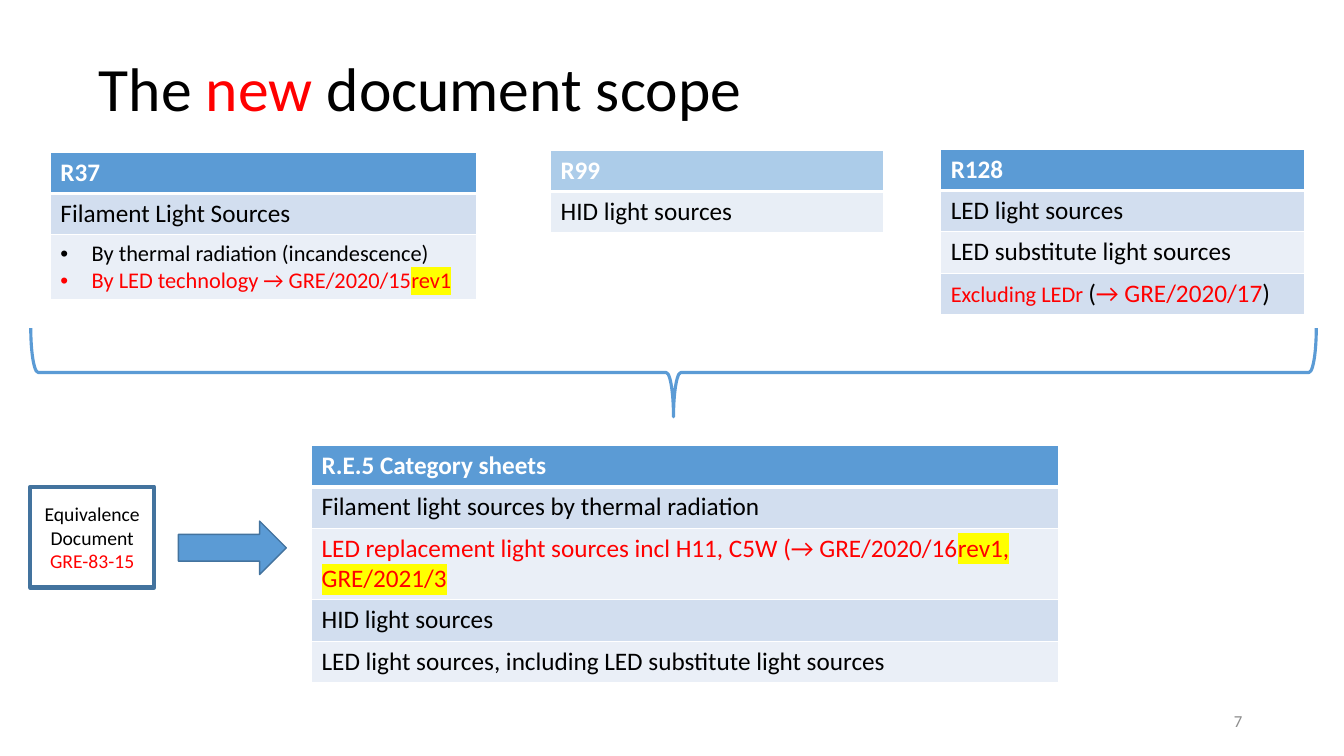
"""Build the slide on the new document scope for light source regulations."""
from dataclasses import dataclass
from typing import Optional

from lxml import etree
from pptx import Presentation
from pptx.dml.color import RGBColor
from pptx.enum.shapes import MSO_SHAPE
from pptx.enum.text import MSO_ANCHOR, MSO_AUTO_SIZE, PP_ALIGN
from pptx.oxml.ns import qn
from pptx.util import Emu, Pt

PX = 9144
FONT = "Calibri"
BLACK, WHITE, RED, YELLOW = "000000", "FFFFFF", "FF0000", "FFFF00"
BLUE, DARK_BLUE, GREY = "5B9BD5", "43739E", "8C8C8C"
BANDS = ("D2DEEF", "EAEFF7")
LEFT, CENTER, RIGHT = PP_ALIGN.LEFT, PP_ALIGN.CENTER, PP_ALIGN.RIGHT
MIDDLE = MSO_ANCHOR.MIDDLE
NO_AUTOFIT = MSO_AUTO_SIZE.NONE
RECTANGLE, RIGHT_ARROW, LEFT_BRACE = (
    MSO_SHAPE.RECTANGLE, MSO_SHAPE.RIGHT_ARROW, MSO_SHAPE.LEFT_BRACE)
ROW, TWO_SMALL_LINES, TWO_LINES = 41, 62, 70
BULLET_INDENT = 31


@dataclass(frozen=True)
class Span:
    """A stretch of text with one format."""
    text: str
    color: str = BLACK
    size: int = 18
    bold: bool = False
    highlight: Optional[str] = None


Paragraphs = list[list[Span]]


@dataclass(frozen=True)
class Row:
    """A body row of a regulation table."""
    paragraphs: Paragraphs
    height: int = ROW
    bulleted: bool = False


@dataclass(frozen=True)
class Regulation:
    """A one-column table with a heading."""
    heading: str
    left: int
    top: int
    width: int
    rows: list[Row]
    opacity: int = 100


@dataclass(frozen=True)
class Figure:
    """A preset shape with its outline and fill."""
    preset: int
    box: tuple[int, int, int, int]
    line: str
    line_width: float
    fill: Optional[str] = None
    rotation: int = 0


REGULATIONS = [
    Regulation("R37", 50, 151, 423, [
        Row([[Span("Filament Light Sources")]]),
        Row([[Span("By thermal radiation (incandescence)", size=16)],
             [Span("By LED technology → GRE/2020/15", RED, 16),
              Span("rev1", RED, 16, highlight=YELLOW)]], TWO_SMALL_LINES, True),
    ]),
    Regulation("R128", 933, 148, 361, [
        Row([[Span("LED light sources")]]),
        Row([[Span("LED substitute light sources")]]),
        Row([[Span("Excluding LEDr ", RED, 16), Span("("),
              Span("→ GRE/2020/17", RED), Span(")")]]),
    ]),
    Regulation("R.E.5 Category sheets", 309, 442, 741, [
        Row([[Span("Filament light sources by thermal radiation")]]),
        Row([[Span("LED replacement light sources incl H11, C5W (→ GRE/2020/16", RED),
              Span("rev1, GRE/2021/3", RED, highlight=YELLOW)]], TWO_LINES),
        Row([[Span("HID light sources")]]),
        Row([[Span("LED light sources, including LED substitute light sources")]]),
    ]),
    Regulation("R99", 546, 149, 330, [Row([[Span("HID light sources")]])], 50),
]
SCOPE_BRACE = Figure(LEFT_BRACE, (624, -268, 88, 1275), BLUE, 2.25, rotation=270)
EQUIVALENCE_ARROW = Figure(RIGHT_ARROW, (177, 517, 107, 53), DARK_BLUE, 1, BLUE)
EQUIVALENCE_BOX = Figure(RECTANGLE, (30, 483, 123, 100), DARK_BLUE, 3)
EQUIVALENCE_TEXT = [[Span("Equivalence Document", size=14)],
                    [Span("GRE-83-15", RED, 14)]]
TITLE = [[Span("The ", size=44), Span("new", RED, 44),
          Span(" document scope", size=44)]]


def px(*lengths: int) -> list[Emu]:
    """Turn lengths in px into EMU."""
    return [Emu(length * PX) for length in lengths]


def rgb(color: str) -> RGBColor:
    """Turn a hex string into a colour."""
    return RGBColor.from_string(color)


def set_all(target, values: dict) -> None:
    """Set every attribute named in the dict."""
    for name, value in values.items():
        setattr(target, name, value)


def add_color(parent, color: str) -> None:
    """Append an RGB colour element."""
    etree.SubElement(parent, qn("a:srgbClr"), val=color)


def write(frame, paragraphs: Paragraphs, align=LEFT, spacing: float = 1.0) -> None:
    """Fill a text frame with formatted paragraphs."""
    for index, spans in enumerate(paragraphs):
        paragraph = frame.add_paragraph() if index else frame.paragraphs[0]
        set_all(paragraph, {"alignment": align, "line_spacing": spacing})
        for span in spans:
            run = paragraph.add_run()
            run.text = span.text
            set_all(run.font, {"name": FONT, "size": Pt(span.size), "bold": span.bold})
            run.font.color.rgb = rgb(span.color)
            if span.highlight:
                marker = etree.Element(qn("a:highlight"))
                add_color(marker, span.highlight)
                run.font.fill._xPr.find(qn("a:solidFill")).addnext(marker)


def add_bullets(frame) -> None:
    """Give each paragraph a hanging bullet."""
    indent = BULLET_INDENT * PX
    for paragraph in frame.paragraphs:
        properties = paragraph._p.get_or_add_pPr()
        properties.set("marL", str(indent))
        properties.set("indent", str(-indent))
        etree.SubElement(properties, qn("a:buFont"), typeface="Arial")
        etree.SubElement(properties, qn("a:buChar"), char="•")


def style_cell(cell, color: str, opacity: int, bottom: int) -> None:
    """Draw white borders and a fill, with the bottom border in points."""
    properties = cell._tc.get_or_add_tcPr()
    for side, width in {"L": 1, "R": 1, "T": 1, "B": bottom}.items():
        border = etree.SubElement(properties, qn(f"a:ln{side}"), w=str(Pt(width)))
        add_color(etree.SubElement(border, qn("a:solidFill")), WHITE)
    cell.fill.solid()
    cell.fill.fore_color.rgb = rgb(color)
    if opacity < 100:
        tint = properties.find(f"{qn('a:solidFill')}/{qn('a:srgbClr')}")
        etree.SubElement(tint, qn("a:alpha"), val=str(opacity * 1000))


def add_regulation(slide, regulation: Regulation) -> None:
    """Add a regulation table with a heading and banded rows."""
    heading = Row([[Span(regulation.heading, WHITE, bold=True)]])
    rows = [heading, *regulation.rows]
    height = sum(row.height for row in rows)
    table = slide.shapes.add_table(len(rows), 1, *px(
        regulation.left, regulation.top, regulation.width, height)).table
    table.horz_banding = False
    for index, row in enumerate(rows):
        table.rows[index].height = px(row.height)[0]
        cell = table.cell(index, 0)
        color = BANDS[(index - 1) % 2] if index else BLUE
        style_cell(cell, color, regulation.opacity, 1 if index else 3)
        write(cell.text_frame, row.paragraphs)
        if row.bulleted:
            add_bullets(cell.text_frame)


def add_figure(slide, figure: Figure):
    """Add a preset shape and return it."""
    shape = slide.shapes.add_shape(figure.preset, *px(*figure.box))
    shape.rotation = figure.rotation
    shape.shadow.inherit = False
    shape.line.color.rgb = rgb(figure.line)
    shape.line.width = Pt(figure.line_width)
    if figure.fill:
        shape.fill.solid()
        shape.fill.fore_color.rgb = rgb(figure.fill)
    else:
        shape.fill.background()
    return shape


def main() -> None:
    """Build and save the slide."""
    deck = Presentation()
    deck.slide_width, deck.slide_height = px(1333, 750)
    slide = deck.slides.add_slide(deck.slide_layouts[5])
    title = slide.shapes.title
    set_all(title, dict(zip(("left", "top", "width", "height"), px(88, 44, 1150, 94))))
    frame_format = {"word_wrap": True, "auto_size": NO_AUTOFIT, "vertical_anchor": MIDDLE}
    set_all(title.text_frame, frame_format)
    write(title.text_frame, TITLE, spacing=0.9)
    for regulation in REGULATIONS:
        add_regulation(slide, regulation)
    add_figure(slide, SCOPE_BRACE)
    page_number = slide.shapes.add_textbox(*px(942, 695, 300, 40)).text_frame
    set_all(page_number, frame_format)
    write(page_number, [[Span("7", GREY, 12)]], RIGHT)
    add_figure(slide, EQUIVALENCE_ARROW)
    equivalence = add_figure(slide, EQUIVALENCE_BOX).text_frame
    set_all(equivalence, frame_format)
    write(equivalence, EQUIVALENCE_TEXT, CENTER)
    deck.save("out.pptx")


if __name__ == "__main__":
    main()
